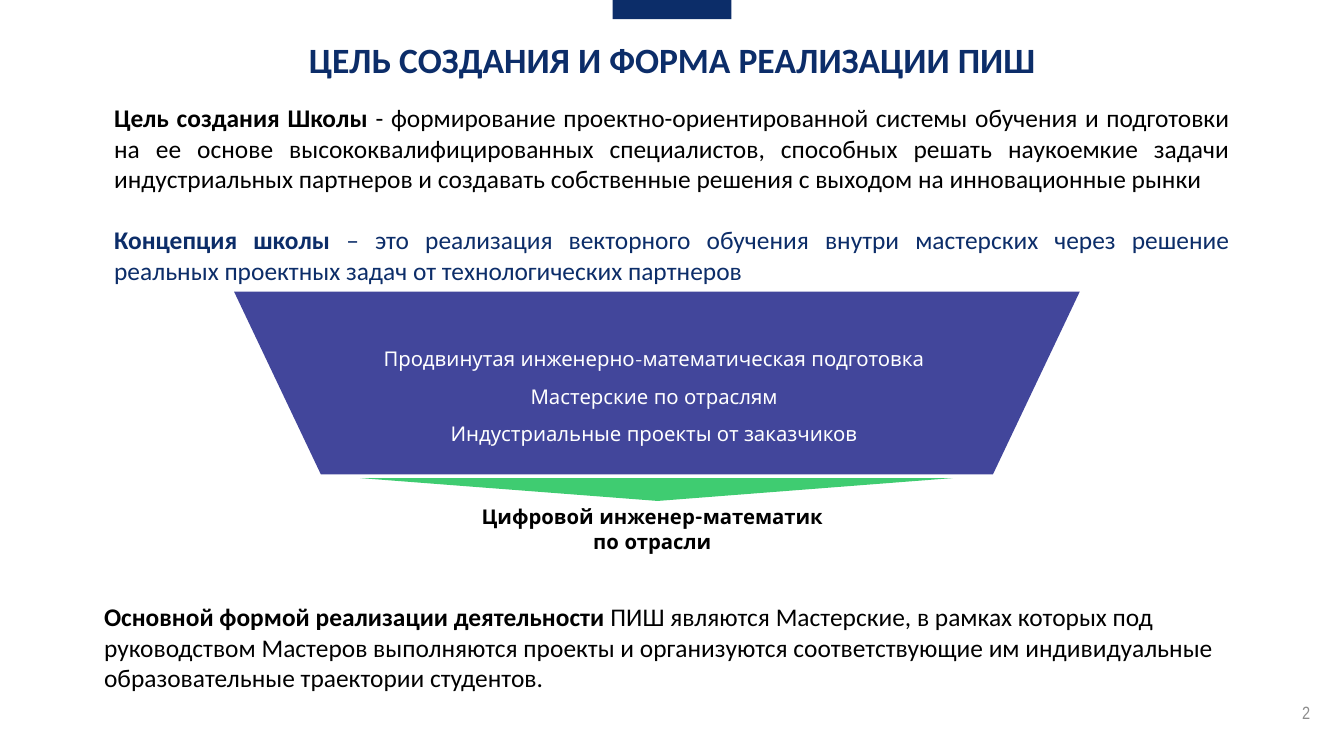
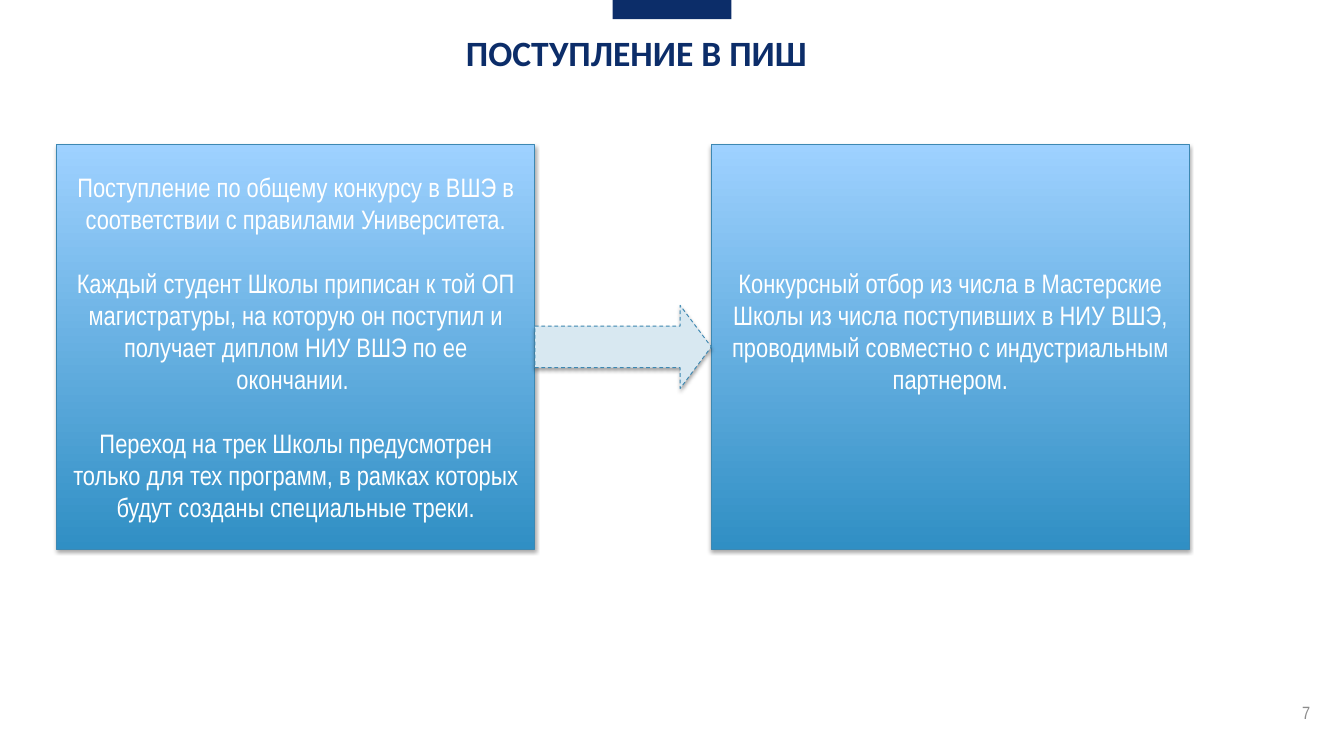
import dataclasses
import typing

import lxml.etree
import pptx
import pptx.dml.color
import pptx.enum.dml
import pptx.enum.shapes
import pptx.enum.text
import pptx.oxml.ns
import pptx.shapes.autoshape
import pptx.slide
import pptx.util

PX = 9144  # 100 px to the inch
SLIDE_WIDTH, SLIDE_HEIGHT = 1470, 827

ALIGN = pptx.enum.text.PP_ALIGN
ANCHOR = pptx.enum.text.MSO_ANCHOR
SHAPE = pptx.enum.shapes.MSO_SHAPE
RGB = pptx.dml.color.RGBColor
Pt = pptx.util.Pt
Shape = pptx.shapes.autoshape.Shape
Slide = pptx.slide.Slide


@dataclasses.dataclass(frozen=True)
class TextStyle:
    font: str
    size: int
    color: str
    bold: bool = False


@dataclasses.dataclass(frozen=True)
class Theme:
    navy: str = "0C2D69"
    funnel: str = "42469B"
    result: str = "3FCC71"
    step_bottom: str = "308FC4"
    step_top: str = "9ED1FF"
    step_line: str = "3D88B2"
    arrow: str = "D8E8F1"
    shadow: str = "000000"
    title: TextStyle = TextStyle("Calibri", 28, "0C2D69", True)
    body: TextStyle = TextStyle("Calibri", 20, "000000")
    concept: TextStyle = TextStyle("Calibri", 20, "0C2D69")
    funnel_text: TextStyle = TextStyle("Quicksand", 16, "FFFFFF")
    result_text: TextStyle = TextStyle("Quicksand", 16, "000000", True)
    step: TextStyle = TextStyle("Arial Narrow", 21, "FFFFFF")
    page_number: TextStyle = TextStyle("Arial Narrow", 14, "8C8C8C")


THEME = Theme()


class Box(typing.NamedTuple):
    left: int
    top: int
    width: int
    height: int

    def emu(self) -> list[int]:
        return [length * PX for length in self]


class Paragraph(typing.NamedTuple):
    """A paragraph with an optional bold lead-in."""
    text: str
    style: TextStyle
    lead: str = ""


class TextLayout(typing.NamedTuple):
    align: ALIGN = ALIGN.CENTER
    anchor: ANCHOR = ANCHOR.MIDDLE
    insets: tuple[int, int, int, int] = (10, 5, 10, 5)
    gap: int = 0


def apply_format(target: typing.Any, values: dict[str, typing.Any]) -> None:
    for name, value in values.items():
        setattr(target, name, value)


def write_text(shape: Shape, paragraphs: list[Paragraph], layout: TextLayout) -> None:
    frame = shape.text_frame
    left, top, right, bottom = (inset * PX for inset in layout.insets)
    apply_format(frame, {
        "word_wrap": True, "vertical_anchor": layout.anchor,
        "margin_left": left, "margin_top": top,
        "margin_right": right, "margin_bottom": bottom,
    })
    for index, content in enumerate(paragraphs):
        paragraph = frame.add_paragraph() if index else frame.paragraphs[0]
        paragraph.alignment = layout.align
        if index and layout.gap:
            paragraph.space_before = Pt(layout.gap)
        style = content.style
        for text, bold in ((content.lead, True), (content.text, style.bold)):
            if text:
                run = paragraph.add_run()
                run.text = text
                apply_format(run.font, {"name": style.font, "size": Pt(style.size), "bold": bold})
                run.font.color.rgb = RGB.from_string(style.color)


def add_text(slide: Slide, box: Box, paragraphs: list[Paragraph],
             layout: TextLayout = TextLayout()) -> None:
    write_text(slide.shapes.add_textbox(*box.emu()), paragraphs, layout)


def add_filled(slide: Slide, kind: SHAPE, box: Box, color: str,
               adjustments: tuple[float, ...] = (), rotation: int = 0) -> Shape:
    shape = slide.shapes.add_shape(kind, *box.emu())
    shape.rotation = rotation
    for index, value in enumerate(adjustments):
        shape.adjustments[index] = value
    shape.fill.solid()
    shape.fill.fore_color.rgb = RGB.from_string(color)
    shape.line.fill.background()
    shape.shadow.inherit = False
    return shape


def outline_with_shadow(shape: Shape) -> None:
    shape.line.fill.solid()
    shape.line.fill.fore_color.rgb = RGB.from_string(THEME.step_line)
    shape.line.width = Pt(0.75)
    qn = pptx.oxml.ns.qn
    effects = shape.element.spPr.find(qn("a:effectLst"))
    shadow = lxml.etree.SubElement(effects, qn("a:outerShdw"), {
        "blurRad": str(Pt(3.1)), "dist": str(Pt(1.8)), "dir": "5400000", "rotWithShape": "0"})
    color = lxml.etree.SubElement(shadow, qn("a:srgbClr"), val=THEME.shadow)
    lxml.etree.SubElement(color, qn("a:alpha"), val="35000")


def add_step(slide: Slide, box: Box, paragraphs: list[Paragraph], layout: TextLayout) -> None:
    step = add_filled(slide, SHAPE.RECTANGLE, box, THEME.step_bottom)
    step.fill.gradient()
    step.fill.gradient_angle = 90
    for stop, color in zip(step.fill.gradient_stops, (THEME.step_bottom, THEME.step_top)):
        stop.color.rgb = RGB.from_string(color)
    outline_with_shadow(step)
    write_text(step, paragraphs, layout)


def add_slide(deck: typing.Any, title: str, title_box: Box, number: int) -> Slide:
    """Add a blank slide with the shared top band, title and page number."""
    slide = deck.slides.add_slide(deck.slide_layouts[6])
    add_text(slide, Box(1374, 757, 70, 44), [Paragraph(str(number), THEME.page_number)],
             TextLayout(align=ALIGN.RIGHT, insets=(11, 6, 11, 6)))
    add_filled(slide, SHAPE.RECTANGLE, Box(670, 0, 130, 21), THEME.navy)
    add_text(slide, title_box, [Paragraph(title, THEME.title)], TextLayout(insets=(0, 0, 0, 0)))
    return slide


def build_goal(deck: typing.Any) -> None:
    slide = add_slide(deck, "ЦЕЛЬ СОЗДАНИЯ И ФОРМА РЕАЛИЗАЦИИ ПИШ",
                      Box(0, 37, SLIDE_WIDTH, 55), 2)
    add_text(slide, Box(115, 107, 1240, 212), [
        Paragraph("- формирование проектно-ориентированной системы обучения и подготовки "
                  "на ее основе высококвалифицированных специалистов, способных решать "
                  "наукоемкие задачи индустриальных партнеров и создавать собственные "
                  "решения с выходом на инновационные рынки ",
                  THEME.body, "Цель создания Школы "),
        Paragraph("– это реализация векторного обучения внутри мастерских через решение "
                  "реальных проектных задач от технологических партнеров",
                  THEME.concept, "Концепция школы "),
    ], TextLayout(ALIGN.JUSTIFY, ANCHOR.TOP, gap=24))
    add_text(slide, Box(104, 653, 1240, 111), [
        Paragraph("ПИШ являются Мастерские, в рамках которых под руководством Мастеров "
                  "выполняются проекты и организуются соответствующие им индивидуальные "
                  "образовательные траектории студентов.",
                  THEME.body, "Основной формой реализации деятельности "),
    ], TextLayout(ALIGN.LEFT, ANCHOR.TOP))

    add_filled(slide, SHAPE.TRAPEZOID, Box(256, 319, 925, 200), THEME.funnel, (0.475,), 180)
    stages = ("Продвинутая инженерно-математическая подготовка",
              "Мастерские по отраслям",
              "Индустриальные проекты от заказчиков")
    for index, stage in enumerate(stages):
        add_text(slide, Box(334, 380 + 41 * index, 763, 25),
                 [Paragraph(stage, THEME.funnel_text)])
    add_filled(slide, SHAPE.ISOSCELES_TRIANGLE, Box(394, 523, 648, 25),
               THEME.result, (0.498,), 180)
    add_text(slide, Box(507, 547, 413, 45),
             [Paragraph("Цифровой инженер-математик по отрасли", THEME.result_text)],
             TextLayout(anchor=ANCHOR.TOP))


def build_admission(deck: typing.Any) -> None:
    slide = add_slide(deck, "ПОСТУПЛЕНИЕ В ПИШ", Box(-39, 20, SLIDE_WIDTH, 74), 7)
    admission = Box(62, 158, 523, 443)
    selection = admission._replace(left=778)
    admission_rules = (
        "Поступление по общему конкурсу в ВШЭ в соответствии с правилами Университета.",
        "Каждый студент Школы приписан к той ОП магистратуры, на которую он поступил "
        "и получает диплом НИУ ВШЭ по ее окончании. ",
        "Переход на трек Школы предусмотрен только для тех программ, в рамках которых "
        "будут созданы специальные треки.",
    )
    selection_rule = ("Конкурсный отбор из числа в Мастерские Школы из числа поступивших в "
                      "НИУ ВШЭ, проводимый совместно с индустриальным партнером.")
    add_step(slide, admission, [Paragraph(rule, THEME.step) for rule in admission_rules],
             TextLayout(gap=25))
    add_step(slide, selection, [Paragraph(selection_rule, THEME.step)],
             TextLayout(insets=(10, 5, 10, 40)))

    arrow_left, arrow_height = admission.left + admission.width, 91
    arrow_top = admission.top + (admission.height - arrow_height) // 2
    arrow = add_filled(slide, SHAPE.RIGHT_ARROW,
                       Box(arrow_left, arrow_top, selection.left - arrow_left, arrow_height),
                       THEME.arrow, (0.5, 0.374))
    outline_with_shadow(arrow)
    arrow.line.dash_style = pptx.enum.dml.MSO_LINE.DASH


def main() -> None:
    deck = pptx.Presentation()
    apply_format(deck, {"slide_width": SLIDE_WIDTH * PX, "slide_height": SLIDE_HEIGHT * PX})
    build_goal(deck)
    build_admission(deck)
    deck.save("out.pptx")


if __name__ == "__main__":
    main()
